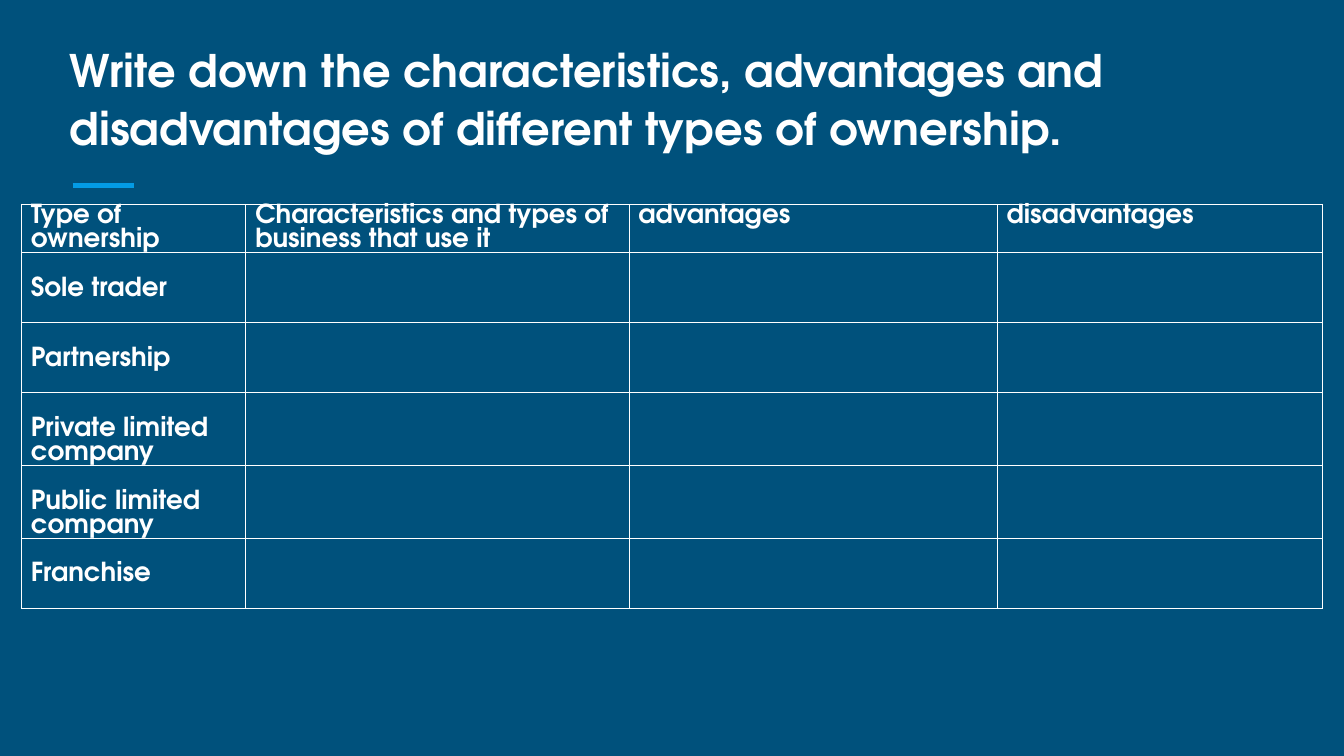
from lxml import etree
from pptx import Presentation
from pptx.dml.color import RGBColor
from pptx.enum.shapes import MSO_CONNECTOR
from pptx.enum.text import MSO_ANCHOR, MSO_AUTO_SIZE, PP_ALIGN
from pptx.oxml.ns import qn
from pptx.util import Inches, Pt

STRAIGHT = MSO_CONNECTOR.STRAIGHT
BOTTOM = MSO_ANCHOR.BOTTOM
NO_AUTOFIT = MSO_AUTO_SIZE.NONE
LEFT = PP_ALIGN.LEFT

NAVY = RGBColor(0x00, 0x51, 0x7C)
SKY = RGBColor(0x03, 0x9B, 0xE5)
WHITE = RGBColor(0xFF, 0xFF, 0xFF)
FONT = "TeX Gyre Adventor"

SLIDE_W = 10
SLIDE_H = SLIDE_W * 9 / 16
TITLE_ROOM = (0.42, 0.21, 9.42, 1.04)
RULE_ROOM = (0.54, 1.38, 0.46)
TABLE_ROOM = (0.16, 1.52, 9.68)

QUESTION = ("Write down the characteristics, advantages and "
            "disadvantages of different types of ownership.")
HEADINGS = ["Type of ownership", "Characteristics and types of business that use it",
            "advantages", "disadvantages"]
OWNERSHIP_TYPES = ["Sole trader", "Partnership", "Private limited company",
                   "Public limited company", "Franchise"]
COLUMN_WIDTHS = [1.67, 2.85, 2.74, 2.42]
HEADING_H, ANSWER_H = 0.36, 0.52
CELL_LINE = Pt(13)


def style_text(paragraph, size, spacing):
    paragraph.alignment = LEFT
    paragraph.line_spacing = spacing
    for run in paragraph.runs:
        run.font.name = FONT
        run.font.size = Pt(size)
        run.font.bold = True
        run.font.color.rgb = WHITE


def add_title(slide, box):
    title = slide.shapes.title
    title.left, title.top, title.width, title.height = map(Inches, box)
    frame = title.text_frame
    frame.text = QUESTION
    frame.word_wrap = True
    frame.auto_size = NO_AUTOFIT
    frame.vertical_anchor = BOTTOM
    frame.margin_left = frame.margin_right = Inches(0.1)
    frame.margin_top = frame.margin_bottom = Inches(0.1)
    question = frame.paragraphs[0]
    question.space_before, question.space_after = Pt(0), Pt(8)
    style_text(question, 24, 1.08)


def add_rule(slide, left, top, width):
    rule = slide.shapes.add_connector(
        STRAIGHT, Inches(left), Inches(top), Inches(left + width), Inches(top))
    rule.line.color.rgb = SKY
    rule.line.width = Pt(3)
    etree.SubElement(rule._element.spPr, qn("a:effectLst"))


def outline_cell(cell):
    """Draw a thin white border on all four sides; call before filling."""
    properties = cell._tc.get_or_add_tcPr()
    for side in ("a:lnL", "a:lnR", "a:lnT", "a:lnB"):
        border = etree.SubElement(properties, qn(side), w=str(Pt(0.5)))
        fill = etree.SubElement(border, qn("a:solidFill"))
        etree.SubElement(fill, qn("a:srgbClr"), val=str(WHITE))


def add_ownership_table(slide, left, top, width):
    heights = [HEADING_H] + [ANSWER_H] * len(OWNERSHIP_TYPES)
    table = slide.shapes.add_table(
        len(heights), len(HEADINGS), Inches(left), Inches(top),
        Inches(width), Inches(sum(heights))).table
    table.horz_banding = False
    for column, share in zip(table.columns, COLUMN_WIDTHS):
        column.width = Inches(width * share / sum(COLUMN_WIDTHS))
    for row, height in zip(table.rows, heights):
        row.height = Inches(height)

    answers = [""] * (len(HEADINGS) - 1)
    content = [HEADINGS] + [[kind] + answers for kind in OWNERSHIP_TYPES]
    for r, texts in enumerate(content):
        for c, text in enumerate(texts):
            cell = table.cell(r, c)
            outline_cell(cell)
            cell.fill.background()
            cell.margin_left = cell.margin_right = Inches(0.07)
            cell.margin_top = CELL_LINE if r and text else 0
            cell.margin_bottom = 0
            cell.text = text
            style_text(cell.text_frame.paragraphs[0], 14, CELL_LINE)


def main():
    prs = Presentation()
    prs.slide_width, prs.slide_height = Inches(SLIDE_W), Inches(SLIDE_H)
    slide = prs.slides.add_slide(prs.slide_layouts.get_by_name("Title Only"))
    slide.background.fill.solid()
    slide.background.fill.fore_color.rgb = NAVY
    add_rule(slide, *RULE_ROOM)
    add_title(slide, TITLE_ROOM)
    add_ownership_table(slide, *TABLE_ROOM)
    prs.save("out.pptx")


if __name__ == "__main__":
    main()
